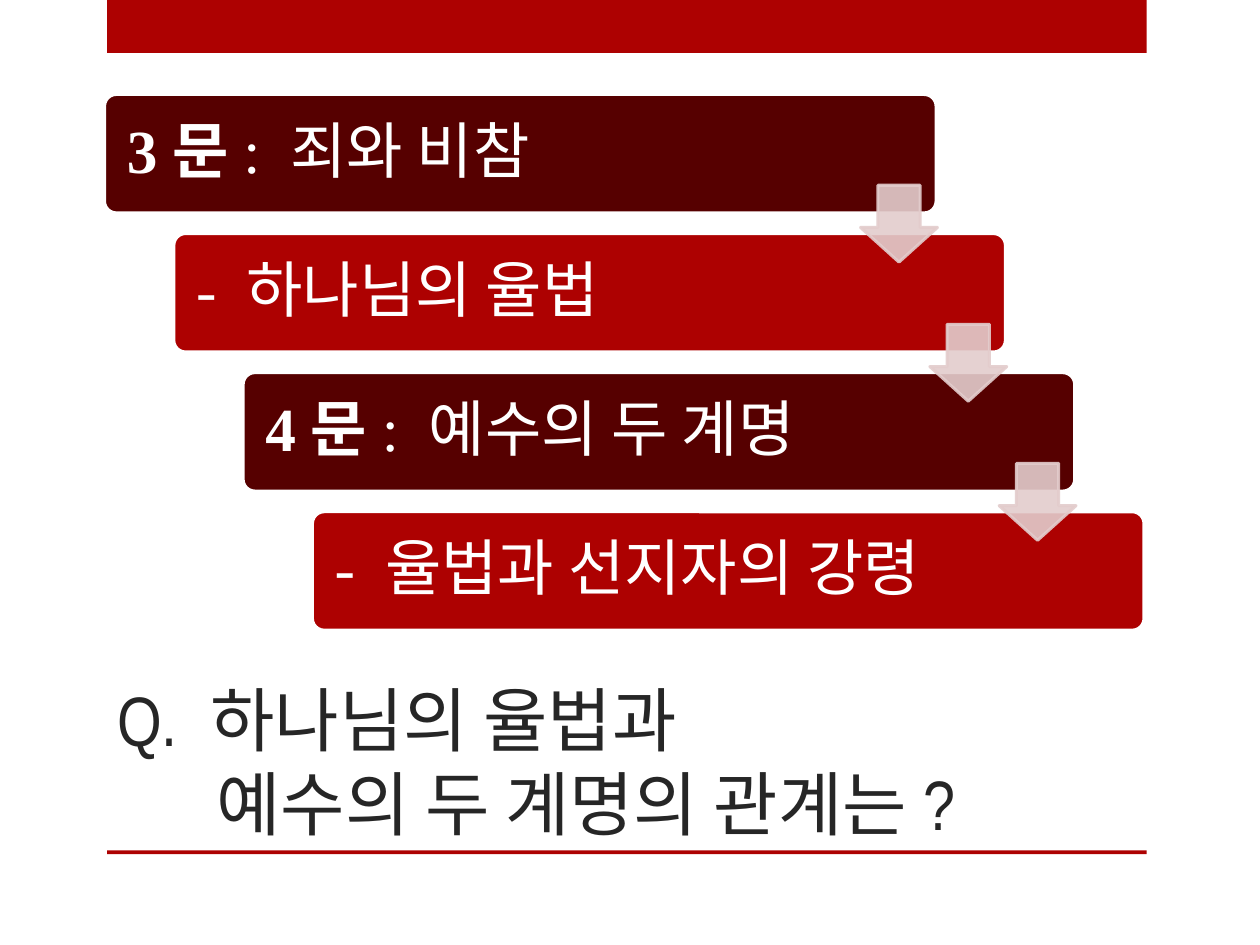
from dataclasses import dataclass

from lxml.etree import SubElement
from pptx import Presentation
from pptx.dml.color import RGBColor
from pptx.enum.shapes import MSO_SHAPE as Preset
from pptx.enum.text import MSO_ANCHOR as Anchor, MSO_AUTO_SIZE as AutoSize, PP_ALIGN as Align
from pptx.oxml.ns import qn
from pptx.util import Inches, Pt

RED = RGBColor(0xAD, 0x01, 0x01)
DARK_RED = RGBColor(0x56, 0x00, 0x00)
PINK = RGBColor(0xE3, 0xCC, 0xCC)
WHITE = RGBColor(0xFF, 0xFF, 0xFF)
CHARCOAL = RGBColor(0x26, 0x26, 0x26)

# Staircase geometry, in inches
STEP_LEFT, STEP_TOP = 0.83, 0.75
STEP_WIDTH, STEP_HEIGHT = 6.6, 0.94
SHIFT_X, SHIFT_Y = 0.55, 1.104
ARROW_LEFT, ARROW_TOP, ARROW_SIZE = 6.83, 1.47, 0.61


@dataclass
class Step:
    label: str  # bold lead
    text: str
    color: RGBColor


STEPS = [
    Step("3문", ": 죄와 비참", DARK_RED),
    Step("", "- 하나님의 율법", RED),
    Step("4문", ": 예수의 두 계명", DARK_RED),
    Step("", "- 율법과 선지자의 강령", RED),
]


def add_filled(slide, preset, left: float, top: float, width: float, height: float,
               color: RGBColor, line_color: RGBColor | None = None):
    shape = slide.shapes.add_shape(
        preset, Inches(left), Inches(top), Inches(width), Inches(height))
    shape.shadow.inherit = False
    shape.fill.solid()
    shape.fill.fore_color.rgb = color
    if line_color is None:
        shape.line.fill.background()
    else:
        shape.line.color.rgb = line_color
        shape.line.width = Pt(1.75)
    return shape


def add_step(slide, index: int, step: Step) -> None:
    shape = add_filled(slide, Preset.ROUNDED_RECTANGLE,
                       STEP_LEFT + index * SHIFT_X, STEP_TOP + index * SHIFT_Y,
                       STEP_WIDTH, STEP_HEIGHT, step.color, WHITE)
    shape.adjustments[0] = 0.1
    frame = shape.text_frame
    frame.vertical_anchor = Anchor.MIDDLE
    frame.margin_left = frame.margin_right = Inches(0.15)
    frame.margin_top = frame.margin_bottom = Inches(0.15)
    paragraph = frame.paragraphs[0]
    paragraph.alignment = Align.LEFT
    paragraph.line_spacing = 0.9
    for text, bold in ((step.label, True), (step.text, False)):
        if text:
            run = paragraph.add_run()
            run.text = text
            run.font.bold = bold
    paragraph.font.name = "Times New Roman"
    paragraph.font.size = Pt(35)
    paragraph.font.color.rgb = WHITE


def add_arrow(slide, index: int) -> None:
    arrow = add_filled(slide, Preset.DOWN_ARROW,
                       ARROW_LEFT + index * SHIFT_X, ARROW_TOP + index * SHIFT_Y,
                       ARROW_SIZE, ARROW_SIZE, PINK, PINK)
    arrow.adjustments[0] = 0.55
    arrow.adjustments[1] = 0.45
    # 90 % opacity for both fill and line
    for color in arrow.element.spPr.iter(qn("a:srgbClr")):
        SubElement(color, qn("a:alpha"), val="90000")


def set_title(slide, text: str) -> None:
    title = slide.shapes.title
    title.left, title.top = Inches(0.83), Inches(5.32)
    title.width, title.height = Inches(8.26), Inches(1.43)
    frame = title.text_frame
    frame.text = text
    frame.auto_size = AutoSize.NONE
    frame.vertical_anchor = Anchor.BOTTOM
    paragraph = frame.paragraphs[0]
    paragraph.alignment = Align.LEFT
    paragraph.font.name = "Arial Narrow"
    paragraph.font.size = Pt(40)
    paragraph.font.color.rgb = CHARCOAL
    # Hanging indent sets the second line under the first word
    properties = paragraph._p.get_or_add_pPr()
    properties.set("marL", str(Inches(0.79)))
    properties.set("indent", str(-Inches(0.79)))


def main() -> None:
    presentation = Presentation()
    presentation.slide_width, presentation.slide_height = Inches(10), Inches(7.5)
    slide = presentation.slides.add_slide(presentation.slide_layouts[5])

    # Top band and bottom rule
    for top, height in ((0, 0.42), (6.75, 0.03)):
        add_filled(slide, Preset.RECTANGLE, 0.85, top, 8.25, height, RED)

    set_title(slide, "Q. 하나님의 율법과\v예수의 두 계명의 관계는?")

    # Staircase, with an arrow between each pair of steps
    for index, step in enumerate(STEPS):
        add_step(slide, index, step)
    for index in range(len(STEPS) - 1):
        add_arrow(slide, index)

    presentation.save("out.pptx")


if __name__ == "__main__":
    main()
